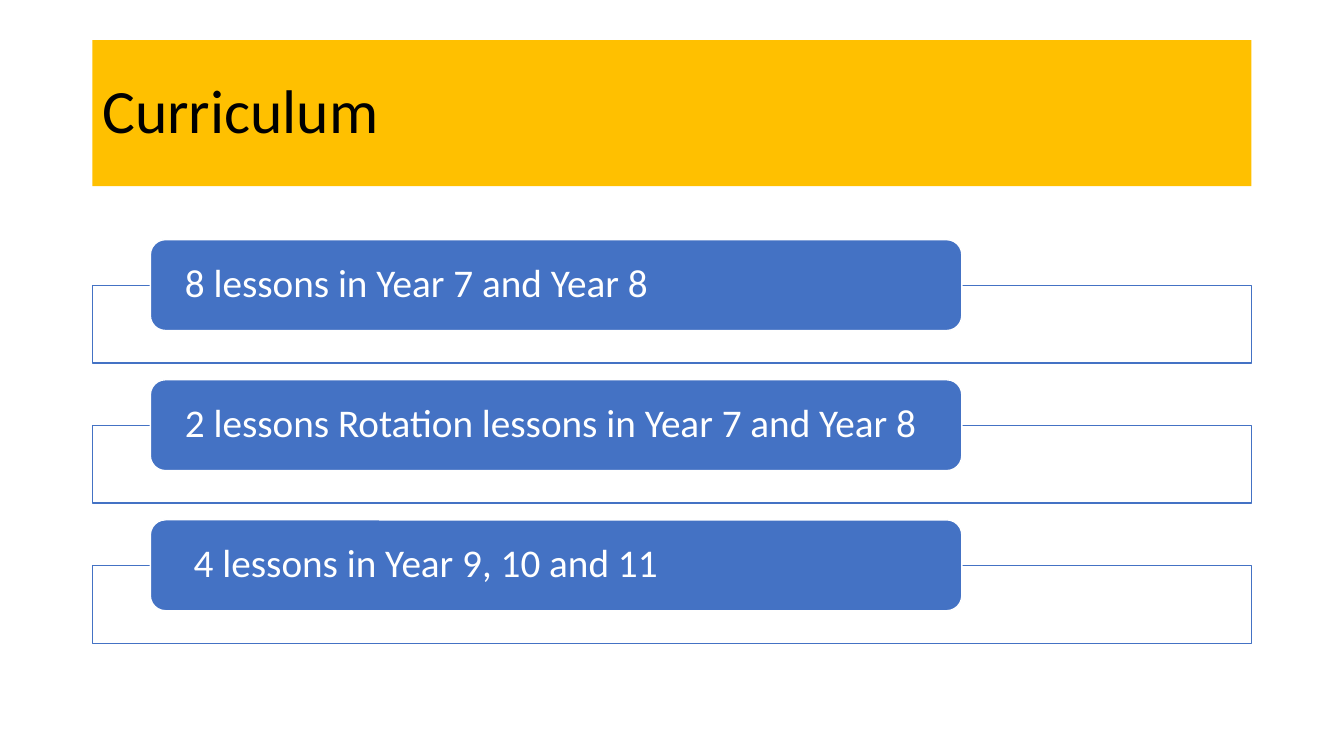
from pptx import Presentation
from pptx.dml.color import RGBColor
from pptx.enum.shapes import MSO_SHAPE
from pptx.enum.text import MSO_ANCHOR, PP_ALIGN
from pptx.util import Cm, Pt

BLACK = RGBColor(0x00, 0x00, 0x00)
WHITE = RGBColor(0xFF, 0xFF, 0xFF)
GOLD = RGBColor(0xFF, 0xC0, 0x00)
BLUE = RGBColor(0x44, 0x72, 0xC4)

LEFT, WIDTH = 2.33, 29.21
FIRST_TOP, ROW_PITCH = 6.04, 3.53
LESSONS = [
    "8 lessons in Year 7 and Year 8",
    "2 lessons Rotation lessons in Year 7 and Year 8",
    " 4 lessons in Year 9, 10 and 11",
]


def add_box(s, kind, left, top, width, height, fill, line=None):
    """Add a filled shape, measured in centimetres, with an optional outline."""
    sp = s.shapes.add_shape(kind, Cm(left), Cm(top), Cm(width), Cm(height))
    sp.shadow.inherit = False
    sp.fill.solid()
    sp.fill.fore_color.rgb = fill
    if line is None:
        sp.line.fill.background()
    else:
        sp.line.color.rgb = line
        sp.line.width = Pt(1)
    return sp


def add_text(sp, text, size=28, color=WHITE, inset=0.76, space_after=0):
    """Write one left-aligned, vertically centred paragraph in a shape."""
    tf = sp.text_frame
    tf.word_wrap = True
    tf.vertical_anchor = MSO_ANCHOR.MIDDLE
    tf.margin_left = tf.margin_right = Cm(inset)
    tf.margin_top = tf.margin_bottom = 0
    p = tf.paragraphs[0]
    p.alignment = PP_ALIGN.LEFT
    p.line_spacing = 0.9
    p.space_after = Pt(space_after)
    r = p.add_run()
    r.text = text
    r.font.name = "Calibri"
    r.font.size = Pt(size)
    r.font.color.rgb = color


def add_title(s, text):
    """Add the gold title band."""
    sp = add_box(s, MSO_SHAPE.RECTANGLE, LEFT, 1.01, WIDTH, 3.68, GOLD)
    add_text(sp, text, size=44, color=BLACK, inset=0.25)


def add_lesson(s, top, text):
    """Add an outlined row with a rounded label over its upper edge."""
    add_box(s, MSO_SHAPE.RECTANGLE, LEFT, top + 1.15, WIDTH, 1.96, WHITE, BLUE)
    sp = add_box(s, MSO_SHAPE.ROUNDED_RECTANGLE, LEFT + 1.46, top, 20.45, 2.29, BLUE, WHITE)
    add_text(sp, text, space_after=9.8)


def main():
    """Build the curriculum slide and save it."""
    prs = Presentation()
    prs.slide_width, prs.slide_height = Cm(33.87), Cm(19.05)
    s = prs.slides.add_slide(prs.slide_layouts[6])
    add_title(s, "Curriculum")
    for i, text in enumerate(LESSONS):
        add_lesson(s, FIRST_TOP + i * ROW_PITCH, text)
    prs.save("out.pptx")


if __name__ == "__main__":
    main()
